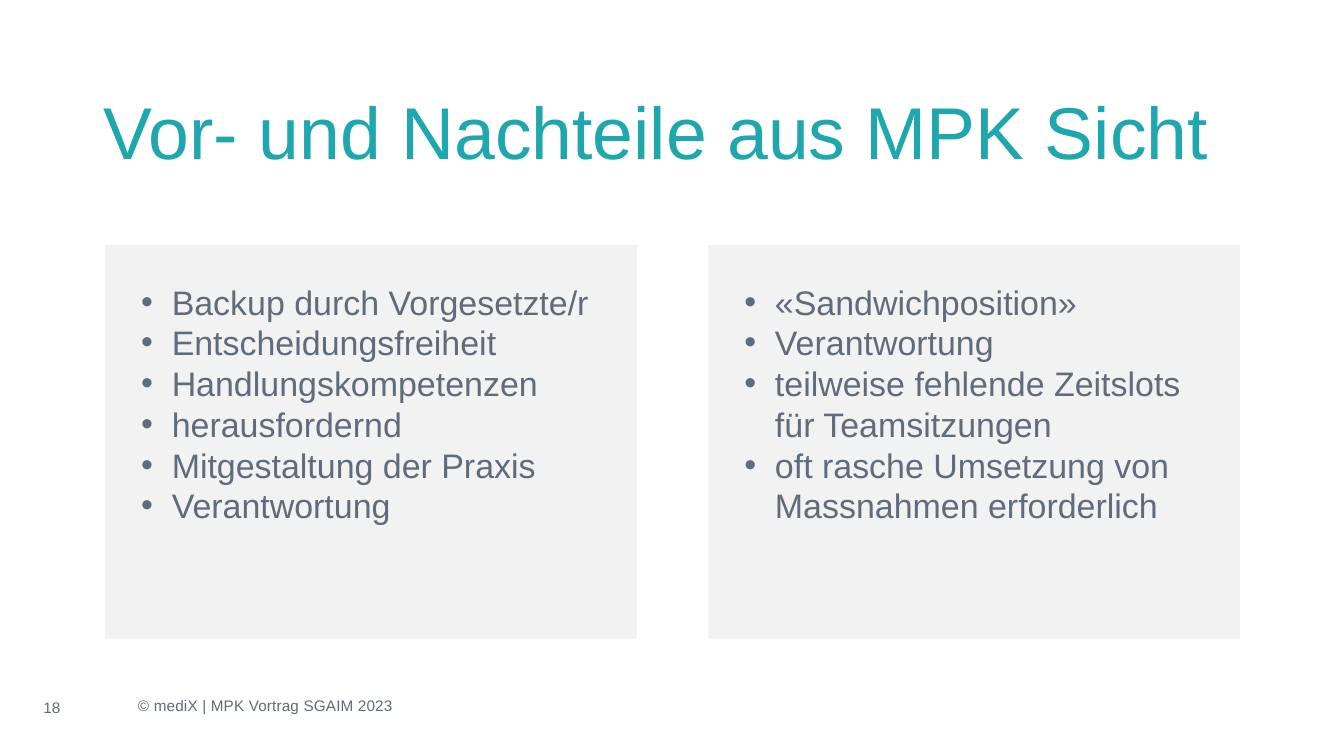
from dataclasses import dataclass

from lxml.etree import SubElement
from pptx import Presentation
from pptx.dml.color import RGBColor
from pptx.enum.text import MSO_ANCHOR as Anchor, MSO_AUTO_SIZE as AutoSize, PP_ALIGN as Align
from pptx.oxml.ns import qn
from pptx.util import Inches, Pt

TEAL = RGBColor(0x1E, 0xA7, 0xAC)
SLATE = RGBColor(0x5F, 0x6C, 0x7B)
LIGHT_GREY = RGBColor(0xF2, 0xF2, 0xF2)
FONT_NAME = "Arial"
TWO_CONTENT_LAYOUT = 3
PANEL_TOP, PANEL_WIDTH, PANEL_HEIGHT = 4.01, 8.7, 6.44
PANEL_INSET = 0.59
BULLET_INDENT = 0.5


@dataclass(frozen=True)
class Panel:
    placeholder_index: int
    left: float
    points: tuple[str, ...]


PANELS = (
    Panel(1, 1.72, (
        "Backup durch Vorgesetzte/r",
        "Entscheidungsfreiheit",
        "Handlungskompetenzen",
        "herausfordernd",
        "Mitgestaltung der Praxis",
        "Verantwortung",
    )),
    Panel(2, 11.59, (
        "«Sandwichposition»",
        "Verantwortung",
        "teilweise fehlende Zeitslots für Teamsitzungen",
        "oft rasche Umsetzung von Massnahmen erforderlich",
    )),
)
FOOTER_RUNS = (("© mediX ", 20), ("| ", 10), ("MPK Vortrag SGAIM 2023", 20))


def place(shape, left: float, top: float, width: float, height: float) -> None:
    shape.left, shape.top = Inches(left), Inches(top)
    shape.width, shape.height = Inches(width), Inches(height)


def set_insets(text_frame, inset: float) -> None:
    text_frame.margin_left = text_frame.margin_right = Inches(inset)
    text_frame.margin_top = text_frame.margin_bottom = Inches(inset)


def format_run(run, size: float, color: RGBColor) -> None:
    run.font.name = FONT_NAME
    run.font.size = Pt(size)
    run.font.color.rgb = color


def add_bullet(paragraph) -> None:
    properties = paragraph._p.get_or_add_pPr()
    properties.set("marL", str(Inches(BULLET_INDENT)))
    properties.set("indent", str(-Inches(BULLET_INDENT)))
    SubElement(properties, qn("a:buFont"), typeface=FONT_NAME)
    SubElement(properties, qn("a:buChar"), char="•")


def draw_title(slide) -> None:
    title = slide.shapes.title
    place(title, 1.7, 0.93, 18.96, 2.39)
    text_frame = title.text_frame
    text_frame.text = "Vor- und Nachteile aus MPK Sicht"
    text_frame.auto_size = AutoSize.NONE
    text_frame.vertical_anchor = Anchor.MIDDLE
    set_insets(text_frame, 0)
    paragraph = text_frame.paragraphs[0]
    paragraph.alignment = Align.LEFT
    paragraph.line_spacing = Pt(104)
    format_run(paragraph.runs[0], 86.4, TEAL)


def draw_panel(slide, panel: Panel) -> None:
    body = slide.placeholders[panel.placeholder_index]
    place(body, panel.left, PANEL_TOP, PANEL_WIDTH, PANEL_HEIGHT)
    body.fill.solid()
    body.fill.fore_color.rgb = LIGHT_GREY
    text_frame = body.text_frame
    text_frame.text = "\n".join(panel.points)
    text_frame.auto_size = AutoSize.NONE
    text_frame.vertical_anchor = Anchor.TOP
    set_insets(text_frame, PANEL_INSET)
    for paragraph in text_frame.paragraphs:
        add_bullet(paragraph)
        paragraph.line_spacing = Pt(48)
        paragraph.space_before = Pt(0)
        format_run(paragraph.runs[0], 40, SLATE)


def draw_page_number(slide) -> None:
    page_number = slide.shapes.add_textbox(Inches(0), Inches(11.46), Inches(1.7), Inches(0.24))
    text_frame = page_number.text_frame
    text_frame.text = "18"
    text_frame.word_wrap = True
    text_frame.vertical_anchor = Anchor.MIDDLE
    paragraph = text_frame.paragraphs[0]
    paragraph.alignment = Align.CENTER
    format_run(paragraph.runs[0], 18, SLATE)


def draw_footer(slide) -> None:
    footer = slide.shapes.add_textbox(Inches(2.16), Inches(11.35), Inches(4.43), Inches(0.4))
    footer.text_frame.word_wrap = False
    paragraph = footer.text_frame.paragraphs[0]
    for text, letter_spacing in FOOTER_RUNS:
        run = paragraph.add_run()
        run.text = text
        format_run(run, 18, SLATE)
        run._r.get_or_add_rPr().set("spc", str(letter_spacing))


def main() -> None:
    presentation = Presentation()
    presentation.slide_width = Inches(21.99)
    presentation.slide_height = Inches(12.37)
    slide = presentation.slides.add_slide(presentation.slide_layouts[TWO_CONTENT_LAYOUT])
    draw_title(slide)
    for panel in PANELS:
        draw_panel(slide, panel)
    draw_page_number(slide)
    draw_footer(slide)
    presentation.save("out.pptx")


if __name__ == "__main__":
    main()
